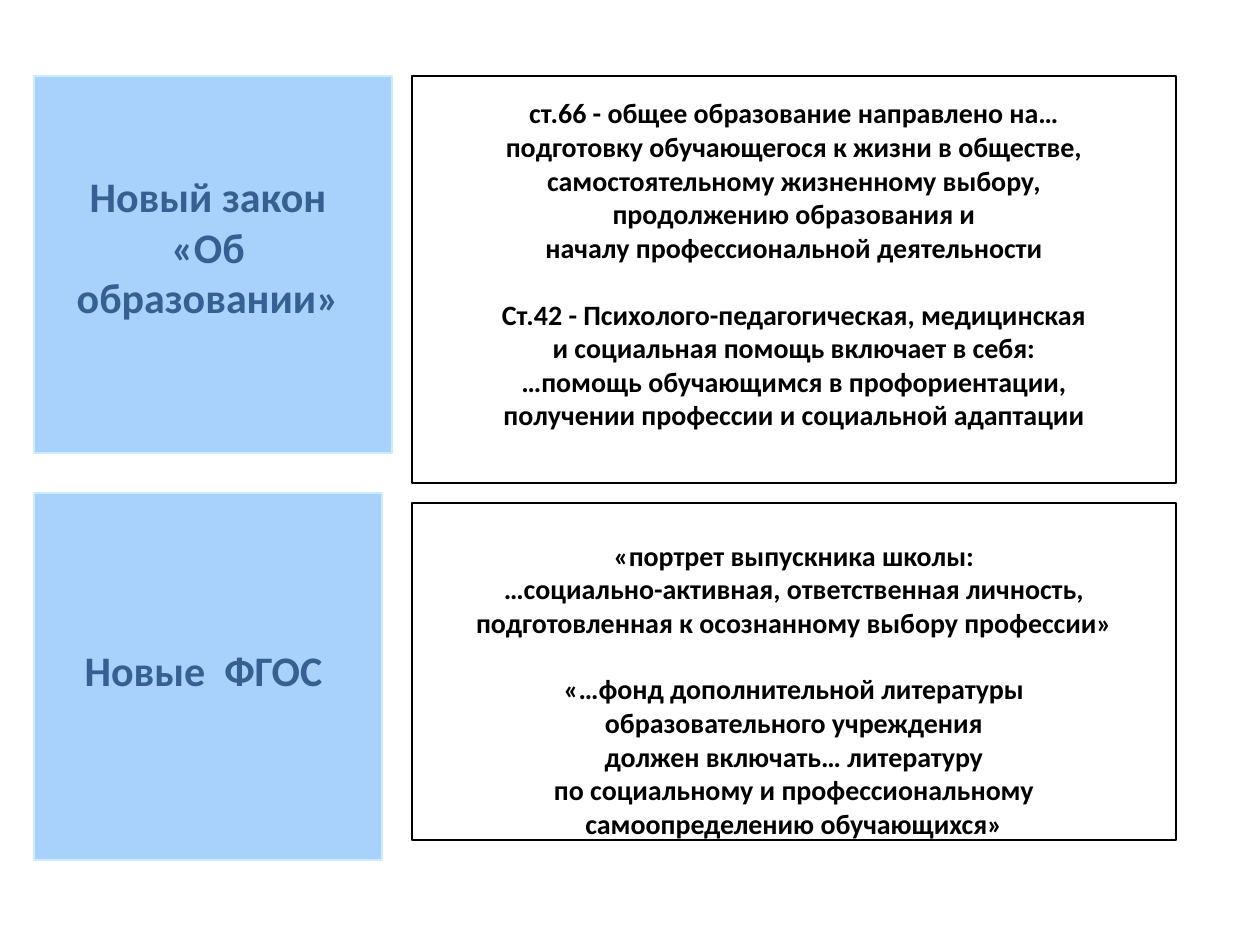
"""Build a slide pairing the education law and the school standards with their provisions."""
from pptx import Presentation
from pptx.dml.color import RGBColor
from pptx.enum.shapes import MSO_SHAPE
from pptx.enum.text import MSO_ANCHOR, PP_ALIGN
from pptx.util import Pt

RECTANGLE = MSO_SHAPE.RECTANGLE
TOP = MSO_ANCHOR.TOP
CENTER = PP_ALIGN.CENTER
PX = 914400 / 126
FONT = "Calibri"
COLORS = {"ink": "000000", "panel": "A8D2FC", "edge": "CCECFF", "heading": "376092"}
PROVISION_LEFT, PROVISION_WIDTH = 412, 764
PANEL_LEFT, HEADING_LEFT = 34, 44
SECTION_GAP = Pt(19)


def add_box(shapes, frame, line, fill=None):
    box = shapes.add_shape(RECTANGLE, *(round(v * PX) for v in frame))
    box.shadow.inherit = False
    if fill:
        box.fill.solid()
        box.fill.fore_color.rgb = RGBColor.from_string(COLORS[fill])
    else:
        box.fill.background()
    box.line.color.rgb = RGBColor.from_string(COLORS[line])
    box.line.width = Pt(0.75)
    return box


def write(frame, paragraphs, size, color, inset):
    frame.vertical_anchor = TOP
    frame.margin_top = round(inset * PX)
    frame.text = "\n".join(paragraphs)
    for paragraph in frame.paragraphs:
        paragraph.alignment = CENTER
        for run in paragraph.runs:
            run.font.name = FONT
            run.font.size = Pt(size)
            run.font.bold = True
            run.font.color.rgb = RGBColor.from_string(COLORS[color])


presentation = Presentation()
presentation.slide_width = round(1260 * PX)
presentation.slide_height = round(945 * PX)
slide = presentation.slides.add_slide(presentation.slide_layouts[6])

provisions = [
    (76, 407, 20, [
        [
            "ст.66 - общее образование направлено на…",
            "подготовку обучающегося к жизни в обществе,",
            "самостоятельному жизненному выбору,",
            "продолжению образования и\vначалу профессиональной деятельности",
        ],
        [
            "Ст.42 - Психолого-педагогическая, медицинская",
            "и социальная помощь включает в себя:\v…помощь обучающимся в профориентации,",
            "получении профессии и социальной адаптации",
        ],
    ]),
    (503, 337, 35, [
        [
            "«портрет выпускника школы:",
            "…социально-активная, ответственная личность,",
            "подготовленная к осознанному выбору профессии»",
        ],
        [
            "«…фонд дополнительной литературы",
            "образовательного учреждения",
            "должен включать… литературу",
            "по социальному и профессиональному",
            "самоопределению обучающихся»",
        ],
    ]),
]
for top, height, inset, (first, second) in provisions:
    provision = add_box(slide.shapes, (PROVISION_LEFT, top, PROVISION_WIDTH, height), "ink")
    text = provision.text_frame
    text.word_wrap = False
    write(text, first + second, 16, "ink", inset)
    text.paragraphs[len(first)].space_before = SECTION_GAP

documents = [
    ("Новый закон «Об образовании»", (76, 358, 377), (103, 328, 227), 68),
    ("Новые  ФГОС", (493, 348, 367), (519, 319, 185), 126),
]
for title, panel, heading, inset in documents:
    group = slide.shapes.add_group_shape()
    panel_top, panel_width, panel_height = panel
    add_box(group.shapes, (PANEL_LEFT, panel_top, panel_width, panel_height), "edge", "panel")
    top, width, height = heading
    label = group.shapes.add_textbox(*(round(v * PX) for v in (HEADING_LEFT, top, width, height)))
    label.text_frame.word_wrap = True
    write(label.text_frame, [title], 24, "heading", inset)

presentation.save("out.pptx")
